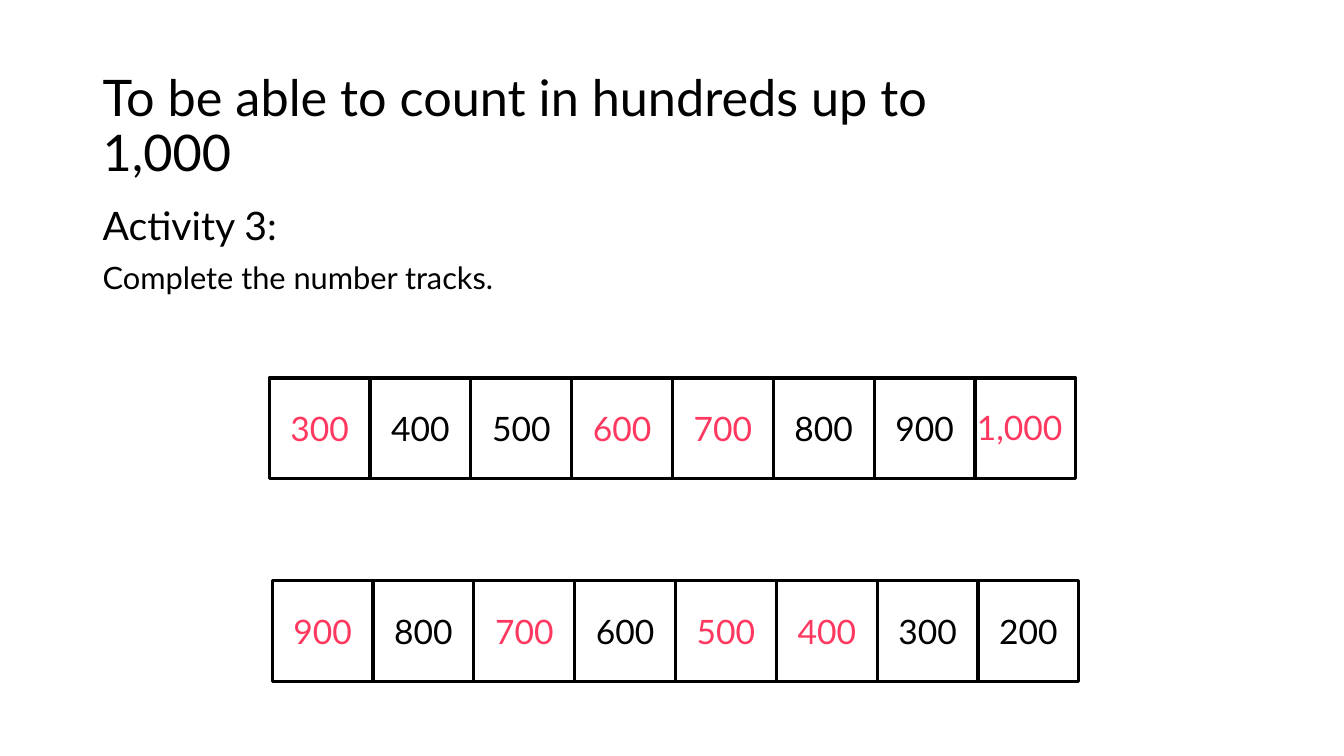
from pptx import Presentation
from pptx.dml.color import RGBColor
from pptx.enum.shapes import MSO_SHAPE
from pptx.enum.text import MSO_ANCHOR, PP_ALIGN
from pptx.util import Inches, Pt

BLACK = RGBColor(0x00, 0x00, 0x00)
WHITE = RGBColor(0xFF, 0xFF, 0xFF)
PINK = RGBColor(0xFF, 0x38, 0x60)
FONT = "Lato"
CELL = 1  # side of a track square, in inches
NUMBER_SIZE = 24

TITLE = "To be able to count in hundreds up to 1,000"
INSTRUCTIONS = [("Activity 3:", 28), ("Complete the number tracks.", 22)]

# Each track: left, top, numbers, and the numbers that are answers
TRACKS = [
    (2.7, 5.76, range(900, 100, -100), {900, 700, 500, 400}),
    (2.67, 3.75, range(300, 1100, 100), {300, 600, 700, 1000}),
]


def add_span(para, text, size, color=BLACK):
    span = para.add_run()
    span.text = text
    span.font.name = FONT
    span.font.size = Pt(size)
    span.font.color.rgb = color


def add_text_box(page, left, top, width, height, lines, color=BLACK,
                 anchor=MSO_ANCHOR.TOP, wrap=True, spacing=0.9):
    """Add a text box with one paragraph for each (text, size) line."""
    box = page.shapes.add_textbox(
        Inches(left), Inches(top), Inches(width), Inches(height))
    frame = box.text_frame
    frame.word_wrap = wrap
    frame.vertical_anchor = anchor
    for index, (text, size) in enumerate(lines):
        para = frame.add_paragraph() if index else frame.paragraphs[0]
        para.line_spacing = spacing
        if index:
            para.space_before = Pt(10)
        add_span(para, text, size, color)


def add_square(page, left, top):
    square = page.shapes.add_shape(
        MSO_SHAPE.RECTANGLE, Inches(left), Inches(top), Inches(CELL), Inches(CELL))
    square.shadow.inherit = False
    square.fill.solid()
    square.fill.fore_color.rgb = WHITE
    square.line.color.rgb = BLACK
    square.line.width = Pt(2.25)
    return square


def add_track(page, left, top, numbers, answers):
    for column, number in enumerate(numbers):
        x = left + column * CELL
        color = PINK if number in answers else BLACK
        label = f"{number:,}"
        square = add_square(page, x, top)
        if number >= 1000:  # too wide for the square's own margins
            add_text_box(page, x - 0.08, top + 0.24, 1.16, 0.5,
                         [(label, NUMBER_SIZE)], color, wrap=False, spacing=1.0)
            continue
        square.text_frame.vertical_anchor = MSO_ANCHOR.MIDDLE
        para = square.text_frame.paragraphs[0]
        para.alignment = PP_ALIGN.CENTER
        add_span(para, label, NUMBER_SIZE, color)


def main():
    deck = Presentation()
    deck.slide_width, deck.slide_height = Inches(13.33), Inches(7.5)
    page = deck.slides.add_slide(deck.slide_layouts[6])
    add_text_box(page, 0.92, 2, 11.5, 4.76, INSTRUCTIONS)
    add_text_box(page, 0.92, 0.54, 9.6, 1.45, [(TITLE, 36)],
                 anchor=MSO_ANCHOR.MIDDLE)
    for track in TRACKS:
        add_track(page, *track)
    deck.save("out.pptx")


if __name__ == "__main__":
    main()
